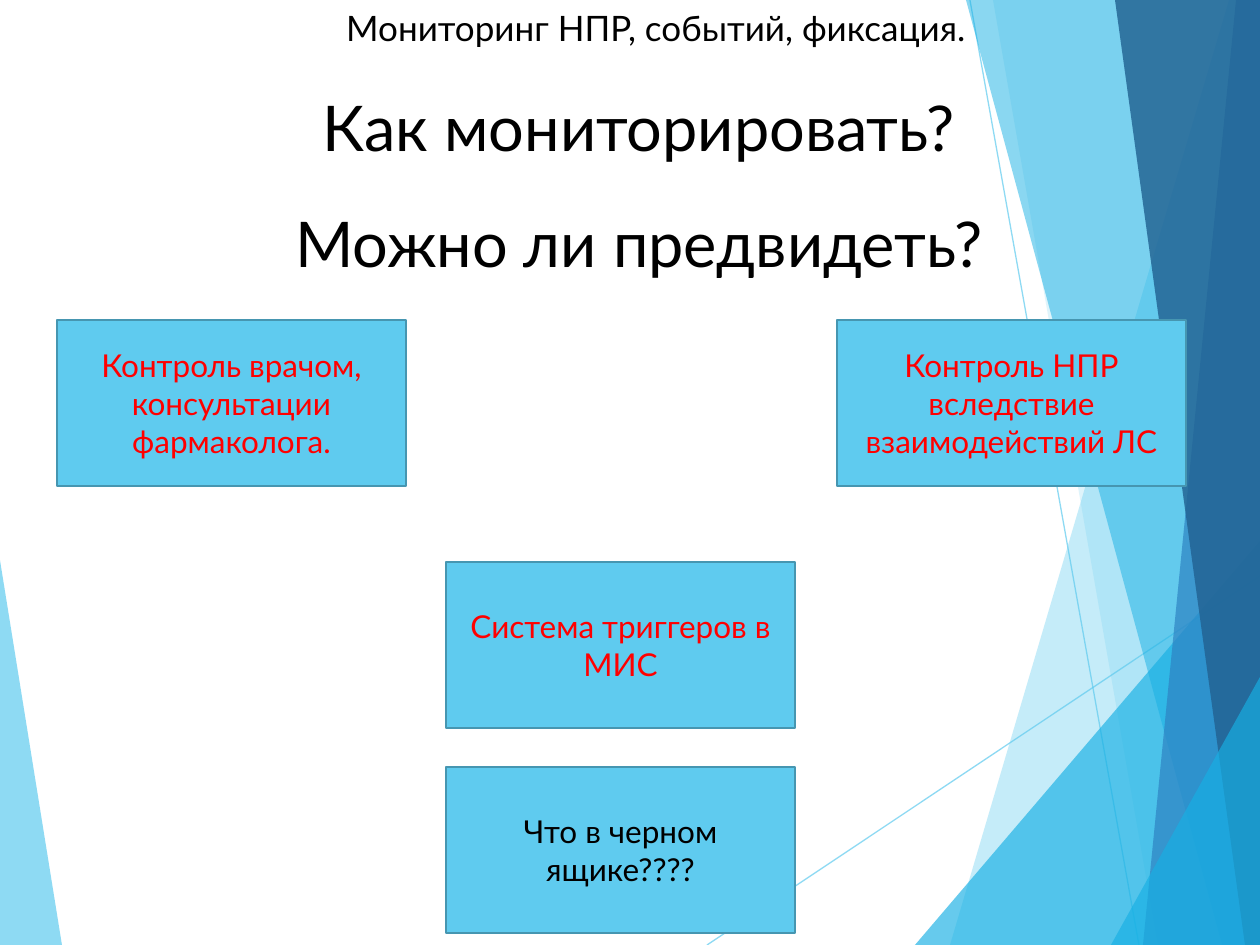
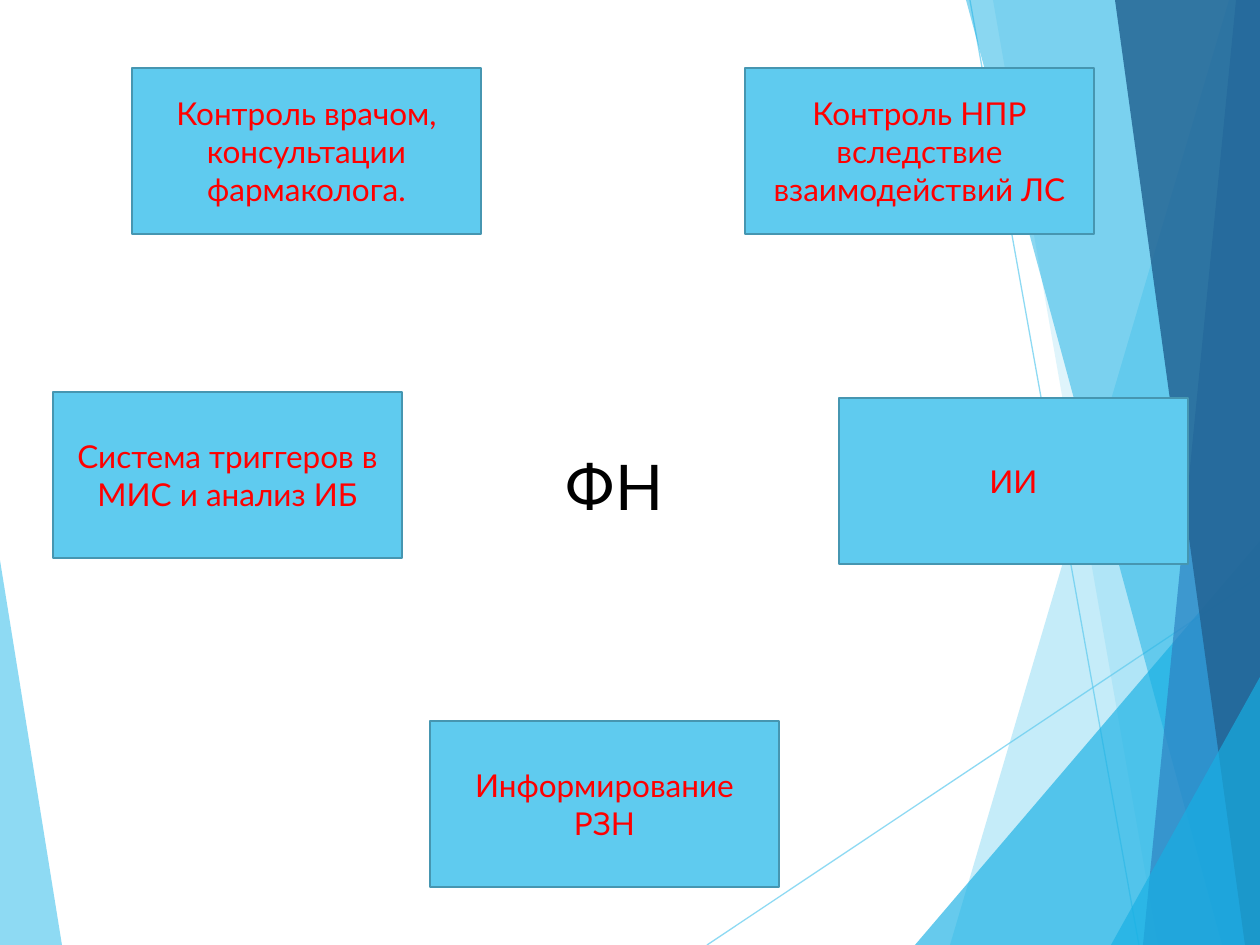
import dataclasses
import typing

import pptx
import pptx.dml.color
import pptx.enum.shapes
import pptx.enum.text
import pptx.oxml
import pptx.oxml.ns
import pptx.util

PX = pptx.util.Inches(1) / 126
WIDE, HIGH = 1260, 945
BOX_W, BOX_H = 349, 166
FONT = "Lato"
COLORS = {
    "sky": "5FCBEF", "azure": "17B0E4", "blue": "2E83C3", "navy": "226292",
    "edge": "4696B1", "red": "FF0000", "black": "000000",
}
ANCHOR = pptx.enum.text.MSO_ANCHOR
Point = tuple[int, int]


@dataclasses.dataclass(frozen=True)
class Band:
    points: tuple[Point, ...]
    color: str
    alpha: int


@dataclasses.dataclass(frozen=True)
class Box:
    left: int
    top: int
    text: str
    color: str = "red"


@dataclasses.dataclass(frozen=True)
class Label:
    left: int
    top: int
    width: int
    text: str


def pane(top: int, foot: int, color: str, alpha: int) -> Band:
    """Full-height band from a slanted left edge to the right slide edge."""
    return Band(((top, 0), (foot, HIGH), (WIDE, HIGH), (WIDE, 0)), color, alpha)


def wedge(foot: int, peak: int, color: str, alpha: int) -> Band:
    """Triangle in the lower right corner."""
    return Band(((foot, HIGH), (WIDE, peak), (WIDE, HIGH)), color, alpha)


WING = Band(((0, 560), (62, HIGH), (0, HIGH)), "sky", 70)
RAYS = (((707, HIGH), (WIDE, 576)), ((970, 0), (1139, HIGH)))
BANDS = (
    pane(1229, 950, "sky", 36),
    pane(993, 1158, "sky", 20),
    wedge(915, 541, "azure", 66),
    pane(966, 1222, "azure", 50),
    pane(1236, 1143, "blue", 70),
    pane(1115, 1245, "navy", 82),
    wedge(1111, 677, "azure", 66),
)

DOCTOR = "Контроль врачом, консультации фармаколога."
DRUGS = "Контроль НПР вследствие взаимодействий ЛС"
TITLE = Label(224, 0, 864, "Мониторинг НПР, событий, фиксация.")
ASKS = (
    Label(253, 82, 772, "Как мониторировать?"),
    Label(253, 198, 772, "Можно ли предвидеть?"),
)
WAYS = (
    Box(57, 320, DOCTOR),
    Box(446, 562, "Система триггеров в МИС"),
    Box(837, 320, DRUGS),
    Box(446, 767, "Что в черном ящике????", "black"),
)
CORE = Label(506, 441, 217, "ФН")
PARTS = (
    Box(132, 68, DOCTOR),
    Box(53, 392, "Система триггеров в МИС и анализ ИБ"),
    Box(745, 68, DRUGS),
    Box(839, 398, "ИИ"),
    Box(430, 721, "Информирование\nРЗН"),
)


def emu(*sizes: int) -> list[int]:
    return [round(size * PX) for size in sizes]


def rgb(name: str) -> pptx.dml.color.RGBColor:
    return pptx.dml.color.RGBColor.from_string(COLORS[name])


def fade(shape: typing.Any, alpha: int) -> None:
    """Give every colour of the shape an opacity in percent."""
    for node in shape.element.iter(pptx.oxml.ns.qn("a:srgbClr")):
        pptx.oxml.ns.qn("a:alpha")
        mark = node.makeelement(pptx.oxml.ns.qn("a:alpha"), {"val": str(alpha * 1000)})
        node.append(mark)


def write(shape: typing.Any, text: str, *, size: int = 18, color: str = "black",
          anchor: typing.Any = ANCHOR.TOP, grow: bool = False) -> None:
    frame = shape.text_frame
    frame.word_wrap = True
    frame.vertical_anchor = anchor
    if grow:
        frame.auto_size = pptx.enum.text.MSO_AUTO_SIZE.SHAPE_TO_FIT_TEXT
    frame.text = text
    for para in frame.paragraphs:
        para.alignment = pptx.enum.text.PP_ALIGN.CENTER
        para.font.name = FONT
        para.font.size = pptx.util.Pt(size)
        para.font.color.rgb = rgb(color)


def draw_band(slide: typing.Any, band: Band) -> None:
    start, *rest = band.points
    path = slide.shapes.build_freeform(*start, scale=PX)
    path.add_line_segments(rest, close=True)
    shape = path.convert_to_shape()
    shape.shadow.inherit = False
    shape.fill.solid()
    shape.fill.fore_color.rgb = rgb(band.color)
    shape.line.fill.background()
    fade(shape, band.alpha)


def draw_ray(slide: typing.Any, start: Point, end: Point) -> None:
    kind = pptx.enum.shapes.MSO_CONNECTOR.STRAIGHT
    ray = slide.shapes.add_connector(kind, *emu(*start, *end))
    ray.line.width = pptx.util.Pt(0.75)
    ray.line.color.rgb = rgb("sky")
    fade(ray, 70)
    props = ray.element.spPr
    props.append(props.makeelement(pptx.oxml.ns.qn("a:effectLst"), {}))


def draw_back(slide: typing.Any) -> None:
    draw_band(slide, WING)
    for start, end in RAYS:
        draw_ray(slide, start, end)
    for band in BANDS:
        draw_band(slide, band)


def draw_box(slide: typing.Any, box: Box) -> None:
    shape = slide.shapes.add_shape(
        pptx.enum.shapes.MSO_SHAPE.RECTANGLE, *emu(box.left, box.top, BOX_W, BOX_H))
    shape.shadow.inherit = False
    shape.fill.solid()
    shape.fill.fore_color.rgb = rgb("sky")
    shape.line.color.rgb = rgb("edge")
    shape.line.width = pptx.util.Pt(1.5)
    write(shape, box.text, color=box.color, anchor=ANCHOR.MIDDLE)


def draw_label(slide: typing.Any, label: Label) -> None:
    shape = slide.shapes.add_textbox(*emu(label.left, label.top, label.width, 89))
    write(shape, label.text, size=36, grow=True)


def set_title(slide: typing.Any, label: Label) -> None:
    """Place and format the title, in front of the backdrop."""
    title = slide.shapes.title
    title.left, title.top, title.width, title.height = emu(
        label.left, label.top, label.width, 55)
    write(title, label.text, size=20, grow=True)
    title.element.getparent().append(title.element)


def add_slide(deck: typing.Any, boxes: tuple[Box, ...], labels: tuple[Label, ...],
              title: Label | None = None) -> None:
    layout = "Title Only" if title else "Blank"
    slide = deck.slides.add_slide(deck.slide_layouts.get_by_name(layout))
    draw_back(slide)
    if title:
        set_title(slide, title)
    for label in labels:
        draw_label(slide, label)
    for box in boxes:
        draw_box(slide, box)


def main() -> None:
    deck = pptx.Presentation()
    deck.slide_width, deck.slide_height = emu(WIDE, HIGH)
    add_slide(deck, WAYS, ASKS, TITLE)
    add_slide(deck, PARTS, (CORE,))
    deck.save("out.pptx")


if __name__ == "__main__":
    main()
